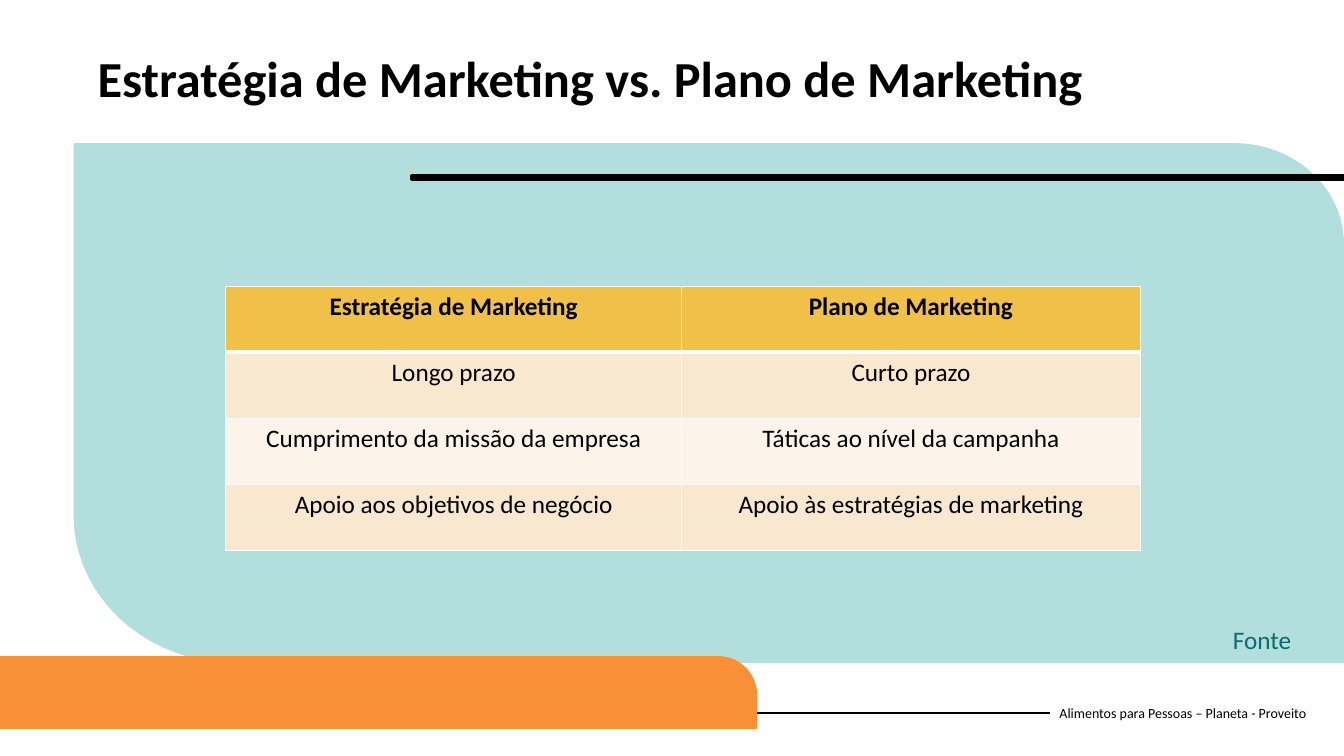
"""Build the slide comparing marketing strategy with marketing plan."""
from math import cos, pi, sin

from lxml import etree
from pptx import Presentation
from pptx.dml.color import RGBColor
from pptx.enum.shapes import MSO_CONNECTOR, MSO_SHAPE
from pptx.enum.text import MSO_ANCHOR, PP_ALIGN
from pptx.oxml.ns import qn
from pptx.util import Inches, Pt

STRAIGHT = MSO_CONNECTOR.STRAIGHT
RECTANGLE = MSO_SHAPE.RECTANGLE
TOP, MIDDLE = MSO_ANCHOR.TOP, MSO_ANCHOR.MIDDLE
CENTER = PP_ALIGN.CENTER

FONT = "Calibri"
BLACK, WHITE, TEAL = "000000", "FFFFFF", "086D6E"
AQUA, ORANGE = "B2DEDD", "F79037"
HEADER_FILL, BAND_FILLS = "F0C049", ("F9E8D0", "FCF4E9")

TITLE = "Estratégia de Marketing vs. Plano de Marketing"
SOURCE = "Fonte"
FOOTER = "Alimentos para Pessoas – Planeta - Proveito"
ROWS = [
    ("Estratégia de Marketing", "Plano de Marketing"),
    ("Longo prazo", "Curto prazo"),
    ("Cumprimento da missão da empresa", "Táticas ao nível da campanha"),
    ("Apoio aos objetivos de negócio", "Apoio às estratégias de marketing"),
]
TABLE_BOX = (2.24, 2.84, 9.07, 2.62)
COL_WIDTHS = (4.52, 4.55)
ARC_STEPS = 24


def rgb(color):
    return RGBColor.from_string(color)


def style_shape(sp, fill):
    sp.shadow.inherit = False
    sp.fill.solid()
    sp.fill.fore_color.rgb = rgb(fill)
    sp.line.fill.background()


def style_text(p, size, color, bold=False):
    for r in p.runs:
        r.font.name = FONT
        r.font.size = Pt(size)
        r.font.bold = bold
        r.font.color.rgb = rgb(color)


def add_text(s, box, text, size, color, bold=False, anchor=TOP, spacing=1.0):
    tf = s.shapes.add_textbox(*map(Inches, box)).text_frame
    tf.word_wrap = True
    tf.vertical_anchor = anchor
    tf.text = text
    p = tf.paragraphs[0]
    p.line_spacing = spacing
    style_text(p, size, color, bold)


def arc(cx, cy, rx, ry, start):
    angles = [start + pi / 2 * i / ARC_STEPS for i in range(ARC_STEPS + 1)]
    return [(cx + rx * cos(a), cy + ry * sin(a)) for a in angles]


def add_panel(s, box, fill, top_right, bottom_left=None):
    x, y, w, h = box
    right, bottom = x + w, y + h
    rx, ry = top_right
    points = [(x, y)] + arc(right - rx, y + ry, rx, ry, -pi / 2) + [(right, bottom)]
    if bottom_left:
        rx, ry = bottom_left
        points += arc(x + rx, bottom - ry, rx, ry, pi / 2)
    else:
        points.append((x, bottom))
    points = [(Inches(px), Inches(py)) for px, py in points]
    builder = s.shapes.build_freeform(*points[0])
    builder.add_line_segments(points[1:], close=True)
    style_shape(builder.convert_to_shape(), fill)


def add_rule(s, x1, x2, y, width):
    line = s.shapes.add_connector(STRAIGHT, *map(Inches, (x1, y, x2, y)))
    line.line.color.rgb = rgb(BLACK)
    line.line.width = Pt(width)
    etree.SubElement(line._element.spPr, qn("a:effectLst"))


def set_borders(cell, widths):
    tc_pr = cell._tc.get_or_add_tcPr()
    for side, width in widths.items():
        ln = etree.SubElement(tc_pr, qn("a:ln" + side), w=str(Pt(width)))
        fill = etree.SubElement(ln, qn("a:solidFill"))
        etree.SubElement(fill, qn("a:srgbClr"), val=WHITE)


def add_comparison(s):
    shape = s.shapes.add_table(len(ROWS), len(COL_WIDTHS), *map(Inches, TABLE_BOX))
    table = shape.table
    for column, width in zip(table.columns, COL_WIDTHS):
        column.width = Inches(width)
    for i, row in enumerate(ROWS):
        header = i == 0
        fill = HEADER_FILL if header else BAND_FILLS[(i - 1) % 2]
        widths = {"L": 1, "R": 1, "T": 3 if i == 1 else 1, "B": 3 if header else 1}
        for j, text in enumerate(row):
            cell = table.cell(i, j)
            set_borders(cell, widths)
            cell.fill.solid()
            cell.fill.fore_color.rgb = rgb(fill)
            cell.text_frame.text = text
            p = cell.text_frame.paragraphs[0]
            p.alignment = CENTER
            style_text(p, 18, BLACK, header)


def main():
    prs = Presentation()
    prs.slide_width, prs.slide_height = Inches(13.33), Inches(7.5)
    s = prs.slides.add_slide(prs.slide_layouts[6])
    add_text(s, (10.41, 6.87, 2.73, 0.4), FOOTER, 10, BLACK, anchor=MIDDLE)
    add_rule(s, 0, 10.41, 7.07, 1.5)
    add_panel(s, (0.73, 1.42, 12.6, 5.16), AQUA, (1.09, 1), (1.61, 1.47))
    add_panel(s, (0, 6.51, 7.51, 0.72), ORANGE, (0.38, 0.39))
    bar = s.shapes.add_shape(RECTANGLE, *map(Inches, (4.08, 1.74, 9.25, 0.04)))
    style_shape(bar, BLACK)
    bar.line.color.rgb = rgb(BLACK)
    bar.line.width = Pt(1.93)
    add_text(s, (0.87, 0.49, 11.59, 0.88), TITLE, 36, BLACK, bold=True, spacing=0.9)
    add_text(s, (12.13, 6.14, 1.41, 0.4), SOURCE, 18, TEAL)
    add_comparison(s)
    prs.save("out.pptx")


if __name__ == "__main__":
    main()
